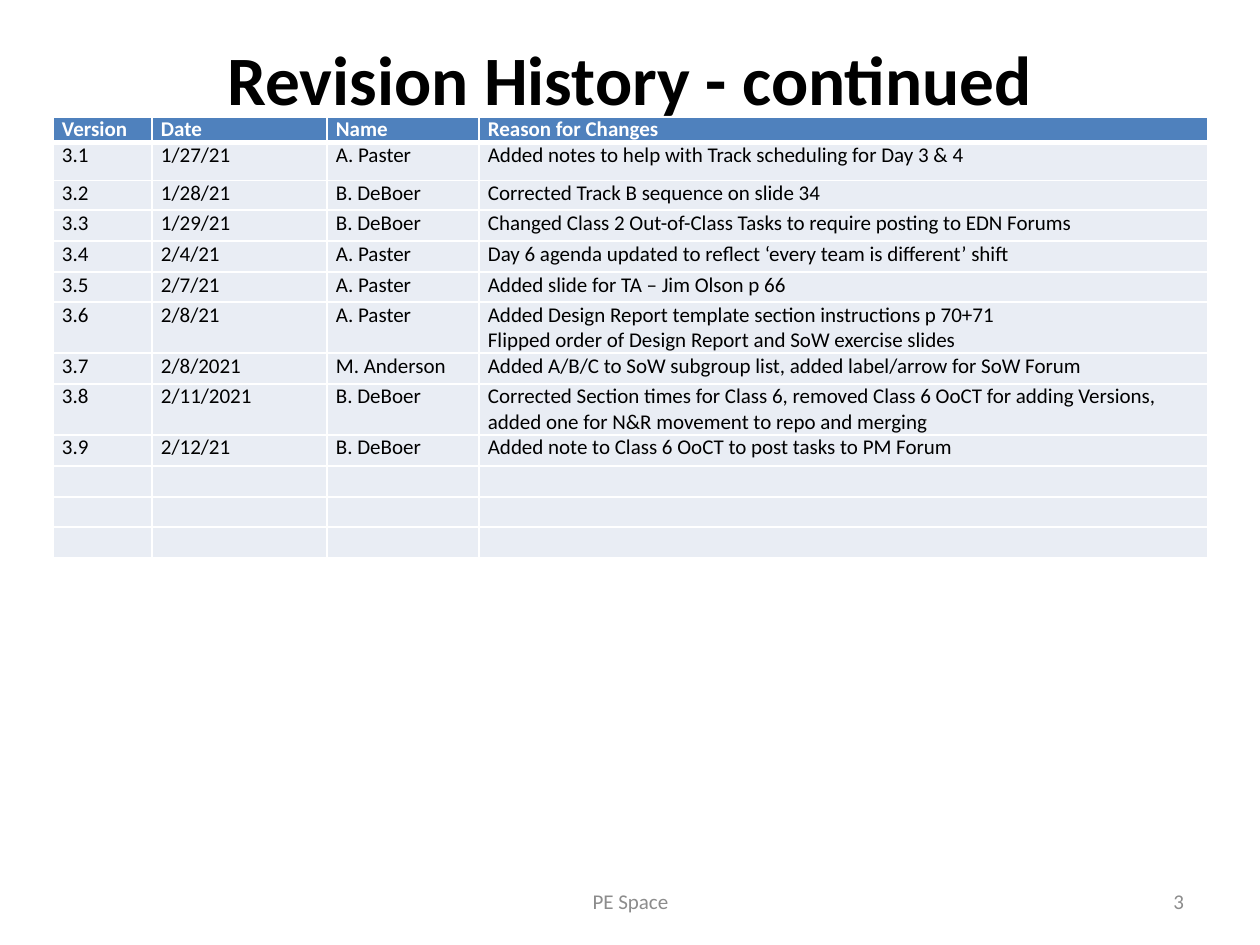
"""Build the revision history slide with its change table."""
from dataclasses import dataclass

from lxml import etree
from pptx import Presentation, util as u
from pptx.dml.color import RGBColor
from pptx.enum import text
from pptx.oxml import ns


@dataclass(frozen=True)
class Theme:
    font: str = "Calibri"
    ink: str = "000000"
    white: str = "FFFFFF"
    muted: str = "8C8C8C"
    header: str = "4F81BD"
    row: str = "E9EDF4"
    title_size: float = 39.6
    body_size: int = 12
    rule: int = 1
    header_rule: int = 3


T = Theme()
PX = 914400 // 126


def style(tf, size, color, bold=False, align=text.PP_ALIGN.LEFT):
    for p in tf.paragraphs:
        p.alignment = align
        for r in p.runs:
            r.font.name, r.font.size, r.font.bold = T.font, u.Pt(size), bold
            r.font.color.rgb = RGBColor.from_string(color)
        if not p.runs:
            etree.SubElement(p._p, ns.qn("a:endParaRPr"), sz=str(size * 100))


def set_borders(cell, widths):
    tcPr = cell._tc.get_or_add_tcPr()
    for i, (side, width) in enumerate(widths.items()):
        ln = etree.Element(ns.qn(f"a:ln{side}"), w=str(u.Pt(width)))
        fill = etree.SubElement(ln, ns.qn("a:solidFill"))
        etree.SubElement(fill, ns.qn("a:srgbClr"), val=T.white)
        tcPr.insert(i, ln)


prs = Presentation()
prs.slide_width, prs.slide_height = 1260 * PX, 945 * PX
s = prs.slides.add_slide(prs.slide_layouts[6])

top, middle = text.MSO_ANCHOR.TOP, text.MSO_ANCHOR.MIDDLE
center, right = text.PP_ALIGN.CENTER, text.PP_ALIGN.RIGHT
labels = [
    ("Revision History - continued", (63, 36, 1134, 158), T.title_size, T.ink, True, center, top),
    ("PE Space", (431, 876, 399, 50), T.body_size, T.muted, False, center, middle),
    ("3", (903, 876, 294, 50), T.body_size, T.muted, False, right, middle),
]
for words, box, size, color, bold, align, anchor in labels:
    tf = s.shapes.add_textbox(*(v * PX for v in box)).text_frame
    tf.word_wrap, tf.vertical_anchor = True, anchor
    tf.margin_top = tf.margin_bottom = 0
    tf.margin_left = tf.margin_right = 13 * PX
    tf.text = words
    style(tf, size, color, bold, align)

rows = [
    ("Version", "Date", "Name", "Reason for Changes"),
    ("3.1", "1/27/21", "A. Paster", "Added notes to help with Track scheduling for Day 3 & 4"),
    ("3.2", "1/28/21", "B. DeBoer", "Corrected Track B sequence on slide 34"),
    ("3.3", "1/29/21", "B. DeBoer",
     "Changed Class 2 Out-of-Class Tasks to require posting to EDN Forums"),
    ("3.4", "2/4/21", "A. Paster",
     "Day 6 agenda updated to reflect ‘every team is different’ shift"),
    ("3.5", "2/7/21", "A. Paster", "Added slide for TA – Jim Olson p 66"),
    ("3.6", "2/8/21", "A. Paster",
     "Added Design Report template section instructions p 70+71\n"
     "Flipped order of Design Report and SoW exercise slides"),
    ("3.7", "2/8/2021", "M. Anderson",
     "Added A/B/C to SoW subgroup list, added label/arrow for SoW Forum"),
    ("3.8", "2/11/2021", "B. DeBoer",
     "Corrected Section times for Class 6, removed Class 6 OoCT for adding Versions, "
     "added one for N&R movement to repo and merging"),
    ("3.9", "2/12/21", "B. DeBoer", "Added note to Class 6 OoCT to post tasks to PM Forum"),
] + [("",) * 4] * 3
col_widths = [99, 175, 152, 729]
row_heights = [25, 38, 30, 31, 31, 30, 51, 31, 51, 31, 31, 30, 31]

table = s.shapes.add_table(
    len(rows), len(col_widths), 53 * PX, 117 * PX,
    sum(col_widths) * PX, sum(row_heights) * PX).table
table.horz_banding = False
for col, width in zip(table.columns, col_widths):
    col.width = width * PX
for i, (values, height) in enumerate(zip(rows, row_heights)):
    table.rows[i].height = height * PX
    is_header = i == 0
    for j, value in enumerate(values):
        cell = table.cell(i, j)
        cell.margin_left = cell.margin_right = 9 * PX
        cell.margin_top = cell.margin_bottom = 0
        cell.text_frame.text = value
        style(cell.text_frame, T.body_size, T.white if is_header else T.ink, is_header)
        cell.fill.solid()
        cell.fill.fore_color.rgb = RGBColor.from_string(T.header if is_header else T.row)
        set_borders(cell, {
            "L": T.rule, "R": T.rule,
            "T": T.header_rule if i == 1 else T.rule,
            "B": T.header_rule if is_header else T.rule})

prs.save("out.pptx")
